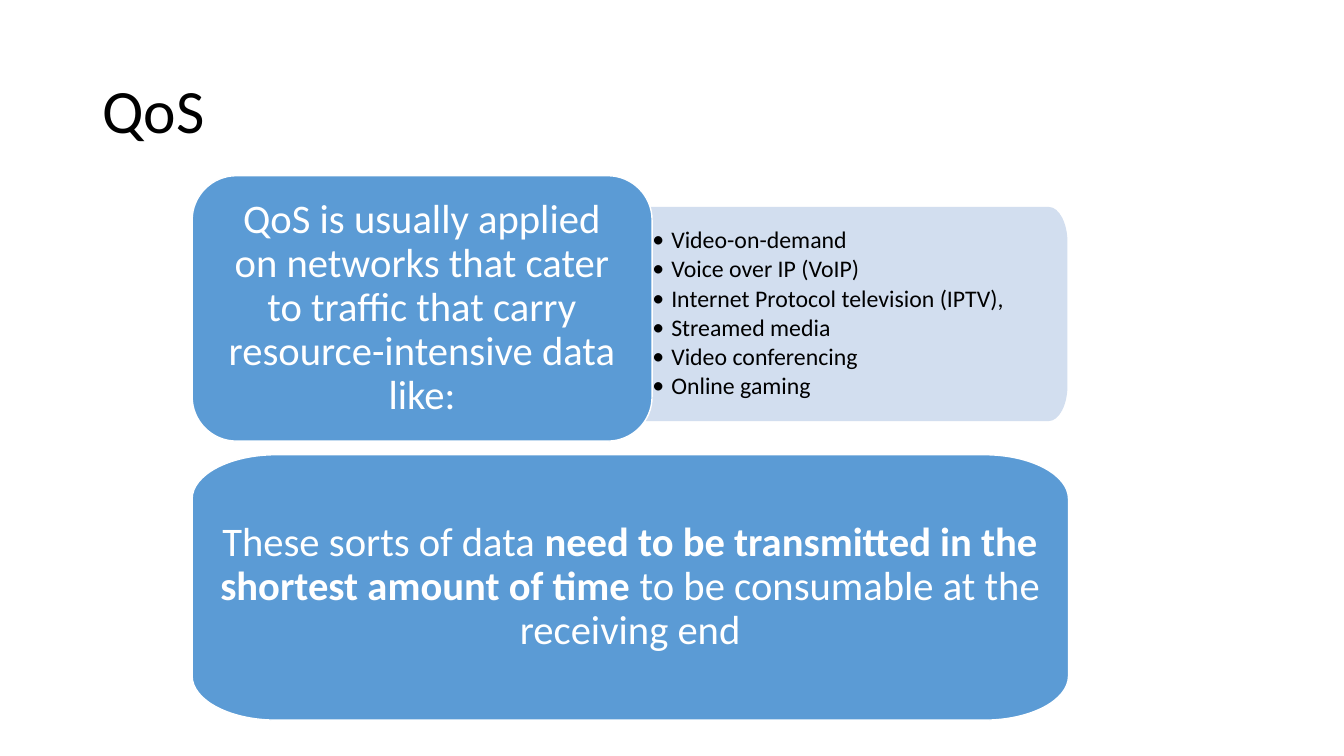
"""Build the QoS slide: traffic types beside their heading, and a delivery statement."""
from dataclasses import dataclass

from lxml.etree import SubElement
from pptx import Presentation
from pptx.dml.color import RGBColor
from pptx.enum.text import MSO_ANCHOR, MSO_AUTO_SIZE, PP_ALIGN
from pptx.oxml.ns import qn
from pptx.util import Pt

TITLE = "QoS"
HEADING = [("QoS is usually applied on networks that cater to traffic that carry "
            "resource-intensive data like:", False)]
TRAFFIC = [
    "Video-on-demand",
    "Voice over IP (VoIP)",
    "Internet Protocol television (IPTV),",
    "Streamed media",
    "Video conferencing",
    "Online gaming",
]
STATEMENT = [
    ("These sorts of data ", False),
    ("need to be transmitted in the shortest amount of time", True),
    (" to be consumable at the receiving end", False),
]


@dataclass(frozen=True)
class Theme:
    font: str = "Calibri"
    title_size: float = 44
    box_size: float = 29
    list_size: float = 17
    ink: RGBColor = RGBColor(0, 0, 0)
    white: RGBColor = RGBColor(0xFF, 0xFF, 0xFF)
    box: RGBColor = RGBColor(0x5B, 0x9B, 0xD5)
    panel: RGBColor = RGBColor(0xD2, 0xDE, 0xEF)


THEME = Theme()
BOX_LEFT, BOX_TOP, BOX_HEIGHT, BOX_GAP = 137.25, 125.5, 189.6, 9.7
HEADING_WIDTH, STATEMENT_WIDTH = 328.5, 626
BOX_CORNER = BOX_HEIGHT / 6
BOX_INSETS = (18, 13.5, 18, 13.5)
PANEL_AREA = (461, 148.3, 301, 152)
PANEL_INSETS = (5, 10, 12, 10)
BULLET_INDENT = 13.5
ARC_RATIO = 0.55


def style_text(paragraph, size, color, align):
    paragraph.alignment = align
    paragraph.line_spacing = 0.9
    for run in paragraph.runs:
        run.font.name = THEME.font
        run.font.size = Pt(size)
        run.font.color.rgb = color


def set_frame(frame, insets):
    frame.word_wrap = True
    frame.auto_size = MSO_AUTO_SIZE.NONE
    frame.vertical_anchor = MSO_ANCHOR.MIDDLE
    frame.margin_left, frame.margin_top, frame.margin_right, frame.margin_bottom = map(Pt, insets)


def round_corners(outline):
    nodes = [(int(node.get("x")), int(node.get("y"))) for node in outline.iter(qn("a:pt"))]
    cuts = outline.findall(qn("a:lnTo"))[::2]
    for index, cut in enumerate(cuts):
        entry, leave = nodes[2 * index:2 * index + 2]
        if entry == leave:
            continue
        apex = (leave[0], entry[1]) if index % 2 else (entry[0], leave[1])
        curve = SubElement(outline, qn("a:cubicBezTo"))
        for start in (entry, leave):
            x, y = (round(a + ARC_RATIO * (b - a)) for a, b in zip(start, apex))
            SubElement(curve, qn("a:pt"), x=str(x), y=str(y))
        SubElement(curve, qn("a:pt"), x=str(leave[0]), y=str(leave[1]))
        outline.replace(cut, curve)


def add_rounded(slide, area, left_corner, right_corner, fill, line, insets):
    left, top, width, height = area
    right, bottom = left + width, top + height
    (lx, ly), (rx, ry) = left_corner, right_corner
    corners = [
        (left, top + ly), (left + lx, top),
        (right - rx, top), (right, top + ry),
        (right, bottom - ry), (right - rx, bottom),
        (left + lx, bottom), (left, bottom - ly),
    ]
    points = [(Pt(x), Pt(y)) for x, y in corners]
    builder = slide.shapes.build_freeform(*points[0])
    builder.add_line_segments(points[1:], close=True)
    shape = builder.convert_to_shape()
    round_corners(next(shape.element.iter(qn("a:path"))))
    shape.shadow.inherit = False
    shape.fill.solid()
    shape.fill.fore_color.rgb = fill
    shape.line.color.rgb = line
    shape.line.width = Pt(1)
    set_frame(shape.text_frame, insets)
    return shape


def add_box(slide, area, corner_width, phrases):
    corner = (corner_width, BOX_CORNER)
    box = add_rounded(slide, area, corner, corner, THEME.box, THEME.white, BOX_INSETS)
    paragraph = box.text_frame.paragraphs[0]
    for phrase, bold in phrases:
        run = paragraph.add_run()
        run.text = phrase
        run.font.bold = bold
    style_text(paragraph, THEME.box_size, THEME.white, PP_ALIGN.CENTER)


def add_traffic_panel(slide):
    corner = (13, 25)
    panel = add_rounded(slide, PANEL_AREA, (0, 0), corner, THEME.panel, THEME.panel, PANEL_INSETS)
    panel.text_frame.text = "\n".join(TRAFFIC)
    for paragraph in panel.text_frame.paragraphs:
        style_text(paragraph, THEME.list_size, THEME.ink, PP_ALIGN.LEFT)
        paragraph.space_after = Pt(2.45)
        properties = paragraph._p.get_or_add_pPr()
        properties.set("marL", str(Pt(BULLET_INDENT)))
        properties.set("indent", str(-Pt(BULLET_INDENT)))
        SubElement(properties, qn("a:buFont"), typeface=THEME.font)
        SubElement(properties, qn("a:buChar"), char="•")


def main():
    deck = Presentation()
    deck.slide_width, deck.slide_height = Pt(960), Pt(540)
    slide = deck.slides.add_slide(deck.slide_layouts[5])

    title = slide.shapes.title
    title.left, title.top, title.width, title.height = map(Pt, (66, 28.75, 828, 104.5))
    title.text_frame.text = TITLE
    set_frame(title.text_frame, (7.2, 3.6, 7.2, 3.6))
    style_text(title.text_frame.paragraphs[0], THEME.title_size, THEME.ink, PP_ALIGN.LEFT)

    add_traffic_panel(slide)
    add_box(slide, (BOX_LEFT, BOX_TOP, HEADING_WIDTH, BOX_HEIGHT), BOX_CORNER, HEADING)
    statement_top = BOX_TOP + BOX_HEIGHT + BOX_GAP
    add_box(slide, (BOX_LEFT, statement_top, STATEMENT_WIDTH, BOX_HEIGHT), 60, STATEMENT)
    deck.save("out.pptx")


if __name__ == "__main__":
    main()
